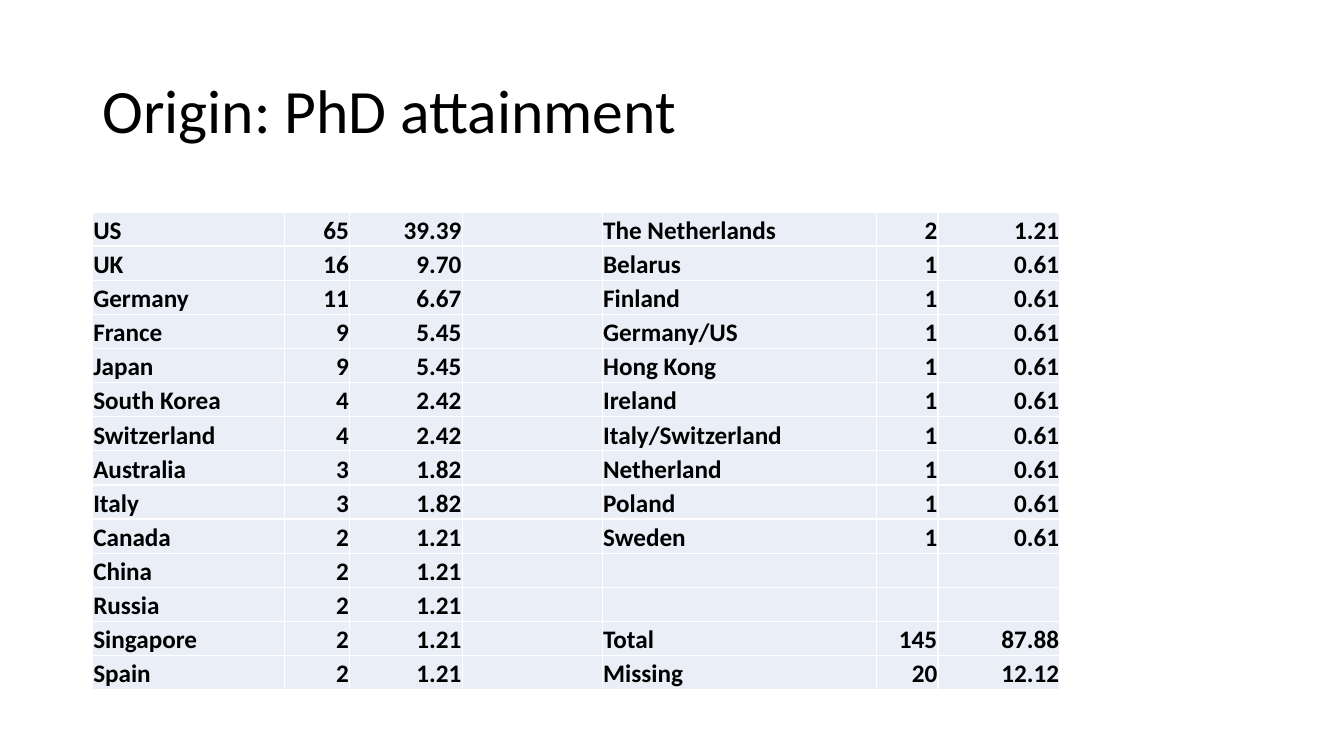
import pptx
import pptx.dml.color
import pptx.enum.text
import pptx.oxml
import pptx.oxml.ns
import pptx.util

Cm = pptx.util.Cm
Align = pptx.enum.text.PP_ALIGN
Anchor = pptx.enum.text.MSO_ANCHOR

RESPONDENTS = 165
ROW_COUNT = 14
COLUMN_WIDTHS = [4.83, 1.65, 2.84, 3.53, 6.91, 1.55, 3.07]
GROUP_STARTS = [0, 4]

FIRST_GROUP = [
    ("US", 65), ("UK", 16), ("Germany", 11), ("France", 9), ("Japan", 9),
    ("South Korea", 4), ("Switzerland", 4), ("Australia", 3), ("Italy", 3),
    ("Canada", 2), ("China", 2), ("Russia", 2), ("Singapore", 2), ("Spain", 2),
]
SECOND_GROUP = [
    ("The Netherlands", 2), ("Belarus", 1), ("Finland", 1), ("Germany/US", 1),
    ("Hong Kong", 1), ("Ireland", 1), ("Italy/Switzerland", 1),
    ("Netherland", 1), ("Poland", 1), ("Sweden", 1),
    None, None, ("Total", 145), ("Missing", 20),
]


def color(hex_code):
    return pptx.dml.color.RGBColor.from_string(hex_code)


def write_text(text_frame, text, *, font, size, fill="000000", bold=False,
               align=Align.LEFT, line_spacing=None):
    paragraph = text_frame.paragraphs[0]
    paragraph.alignment = align
    if line_spacing:
        paragraph.line_spacing = line_spacing
    run = paragraph.add_run()
    run.text = text
    run.font.name = font
    run.font.size = pptx.util.Pt(size)
    run.font.bold = bold
    run.font.color.rgb = color(fill)


def country_grid():
    """Lay out both groups as rows of text, with shares of all respondents."""
    grid = [[""] * len(COLUMN_WIDTHS) for _ in range(ROW_COUNT)]
    for start, group in zip(GROUP_STARTS, (FIRST_GROUP, SECOND_GROUP)):
        for row, entry in zip(grid, group):
            if entry:
                country, count = entry
                share = f"{100 * count / RESPONDENTS:.2f}"
                row[start:start + 3] = [country, str(count), share]
    return grid


class OriginSlide:
    font = "Calibri"
    cell_fill = "EAEFF7"
    border_color = "FFFFFF"
    border_width = pptx.util.Pt(1)

    def __init__(self, presentation):
        self.slide = presentation.slides.add_slide(presentation.slide_layouts[5])

    def add_title(self, text, left, top, width, height):
        title = self.slide.shapes.title
        title.left, title.top = Cm(left), Cm(top)
        title.width, title.height = Cm(width), Cm(height)
        frame = title.text_frame
        frame.word_wrap = True
        frame.auto_size = pptx.enum.text.MSO_AUTO_SIZE.NONE
        frame.vertical_anchor = Anchor.MIDDLE
        write_text(frame, text, font=self.font, size=44, line_spacing=0.9)

    def add_table(self, grid, left, top, row_height):
        shape = self.slide.shapes.add_table(
            len(grid), len(COLUMN_WIDTHS), Cm(left), Cm(top),
            Cm(sum(COLUMN_WIDTHS)), Cm(row_height * len(grid)))
        table = shape.table
        table.first_row = table.horz_banding = False
        for column, width in zip(table.columns, COLUMN_WIDTHS):
            column.width = Cm(width)
        for row_index, row in enumerate(grid):
            table.rows[row_index].height = Cm(row_height)
            for column_index, text in enumerate(row):
                cell = table.cell(row_index, column_index)
                self.style_cell(cell)
                if text:
                    align = Align.LEFT if column_index in GROUP_STARTS else Align.RIGHT
                    write_text(cell.text_frame, text, font=self.font, size=18,
                               bold=True, align=align)

    def style_cell(self, cell):
        cell.margin_left = cell.margin_right = cell.margin_top = Cm(0.02)
        cell.margin_bottom = Cm(0)
        cell.vertical_anchor = Anchor.BOTTOM
        properties = cell._tc.get_or_add_tcPr()
        for side in "LRTB":
            properties.append(pptx.oxml.parse_xml(
                f'<a:ln{side} {pptx.oxml.ns.nsdecls("a")} w="{self.border_width}">'
                f'<a:solidFill><a:srgbClr val="{self.border_color}"/></a:solidFill>'
                f'</a:ln{side}>'))
        cell.fill.solid()
        cell.fill.fore_color.rgb = color(self.cell_fill)


def main():
    presentation = pptx.Presentation()
    presentation.slide_width = Cm(33.87)
    presentation.slide_height = Cm(19.05)
    origin = OriginSlide(presentation)
    origin.add_title("Origin: PhD attainment", 2.33, 1.01, 29.21, 3.68)
    origin.add_table(country_grid(), 2.33, 5.34, 0.86)
    presentation.save("out.pptx")


if __name__ == "__main__":
    main()
